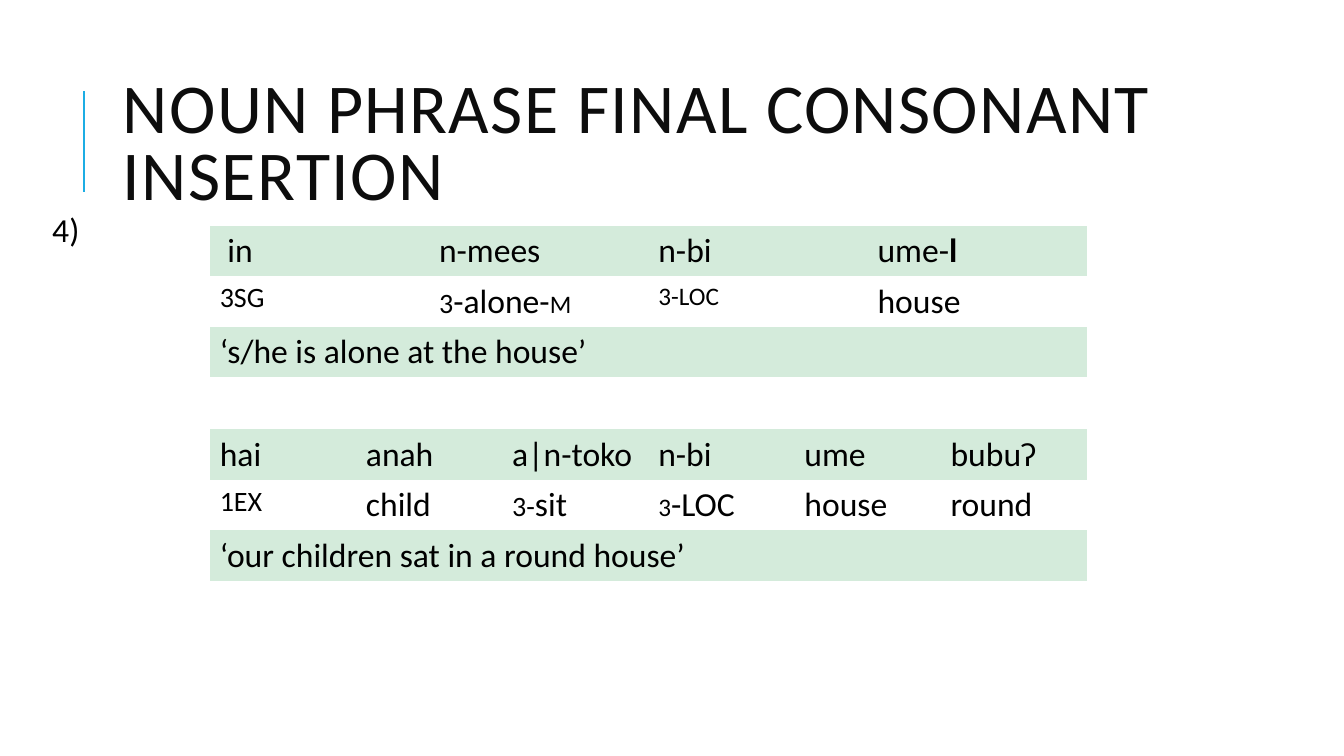
from pptx import Presentation
from pptx.dml.color import RGBColor
from pptx.enum.shapes import MSO_CONNECTOR
from pptx.enum.text import MSO_ANCHOR
from pptx.oxml.ns import qn
from pptx.util import Inches, Pt

FONT = "Calibri"
BLACK = "000000"
GREEN = "D4EBDB"
PLAIN = "{2D5ABB26-0587-4C30-8999-92F81FD0307C}"

# A cell is a list of runs: (text, size, bold)
ALONE = [
    [[(" in", 24, False)], [("n-mees", 24, False)], [("n-bi", 24, False)],
     [("ume-", 24, False), ("l", 24, True)]],
    [[("3SG", 20, False)],
     [("3", 20, False), ("-alone-", 24, False), ("M", 18, False)],
     [("3-LOC", 18, False)], [("house", 24, False)]],
    [[("‘s/he is alone at the house’", 24, False)]],
]
ROUND = [
    [[(word, 24, False)]
     for word in ("hai", "anah", "a|n-toko", "n-bi", "ume", "bubuʔ")],
    [[("1EX", 20, False)], [("child", 24, False)],
     [("3-", 20, False), ("sit", 24, False)],
     [("3", 18, False), ("-LOC", 24, False)],
     [("house", 24, False)], [("round", 24, False)]],
    [[("‘our children sat in a round house’", 24, False)]],
]


def color(code):
    return RGBColor.from_string(code)


def add_run(para, text, size, bold=False, ink=BLACK):
    run = para.add_run()
    run.text = text
    font = run.font
    font.name, font.size, font.bold = FONT, Pt(size), bold
    font.color.rgb = color(ink)
    return run


def add_box(slide, left, top, width, height):
    box = slide.shapes.add_textbox(
        Inches(left), Inches(top), Inches(width), Inches(height))
    box.text_frame.word_wrap = True
    return box.text_frame


def add_title(slide, left, top, width, height):
    """Heading with an accent rule on its left."""
    rule = slide.shapes.add_connector(
        MSO_CONNECTOR.STRAIGHT, Inches(left - 0.29), Inches(top + 1.26),
        Inches(left - 0.29), Inches(top + 0.26))
    rule.line.color.rgb = color("1CADE4")
    rule.line.width = Pt(1.5)
    props = rule._element.spPr
    props.append(props.makeelement(qn("a:effectLst"), {}))

    frame = add_box(slide, left, top, width, height)
    frame.vertical_anchor = MSO_ANCHOR.MIDDLE
    para = frame.paragraphs[0]
    para.line_spacing = 0.8
    run = add_run(para, "NOUN PHRASE FINAL CONSONANT INSERTION", 50,
                  ink="0D0D0D")
    run.font._element.set("spc", "100")


def add_label(slide, left, top, width, height):
    frame = add_box(slide, left, top, width, height)
    add_run(frame.paragraphs[0], "4)", 24)


def add_gloss(slide, rows, left, top, width, height):
    """Words, their glosses, and a translation across the full width."""
    count = len(rows[0])
    frame = slide.shapes.add_table(
        len(rows), count, Inches(left), Inches(top),
        Inches(width), Inches(height))
    table = frame.table
    table.first_row = table.horz_banding = False
    for style in frame._element.iter(qn("a:tableStyleId")):
        style.text = PLAIN
    table.cell(2, 0).merge(table.cell(2, count - 1))
    for i, row in enumerate(rows):
        for j in range(count):
            fill = table.cell(i, j).fill
            if i % 2:
                fill.background()
            else:
                fill.solid()
                fill.fore_color.rgb = color(GREEN)
        for j, runs in enumerate(row):
            para = table.cell(i, j).text_frame.paragraphs[0]
            for text, size, bold in runs:
                add_run(para, text, size, bold)


def main():
    deck = Presentation()
    deck.slide_width, deck.slide_height = Inches(13.33), Inches(7.5)
    slide = deck.slides.add_slide(deck.slide_layouts[6])
    add_title(slide, 1.12, 0.64, 10.63, 1.64)
    add_label(slide, 0.42, 2.02, 0.56, 0.5)
    for rows, top in ((ALONE, 2.24), (ROUND, 4.26)):
        add_gloss(slide, rows, 2.08, top, 8.7, 1.5)
    deck.save("out.pptx")


if __name__ == "__main__":
    main()
